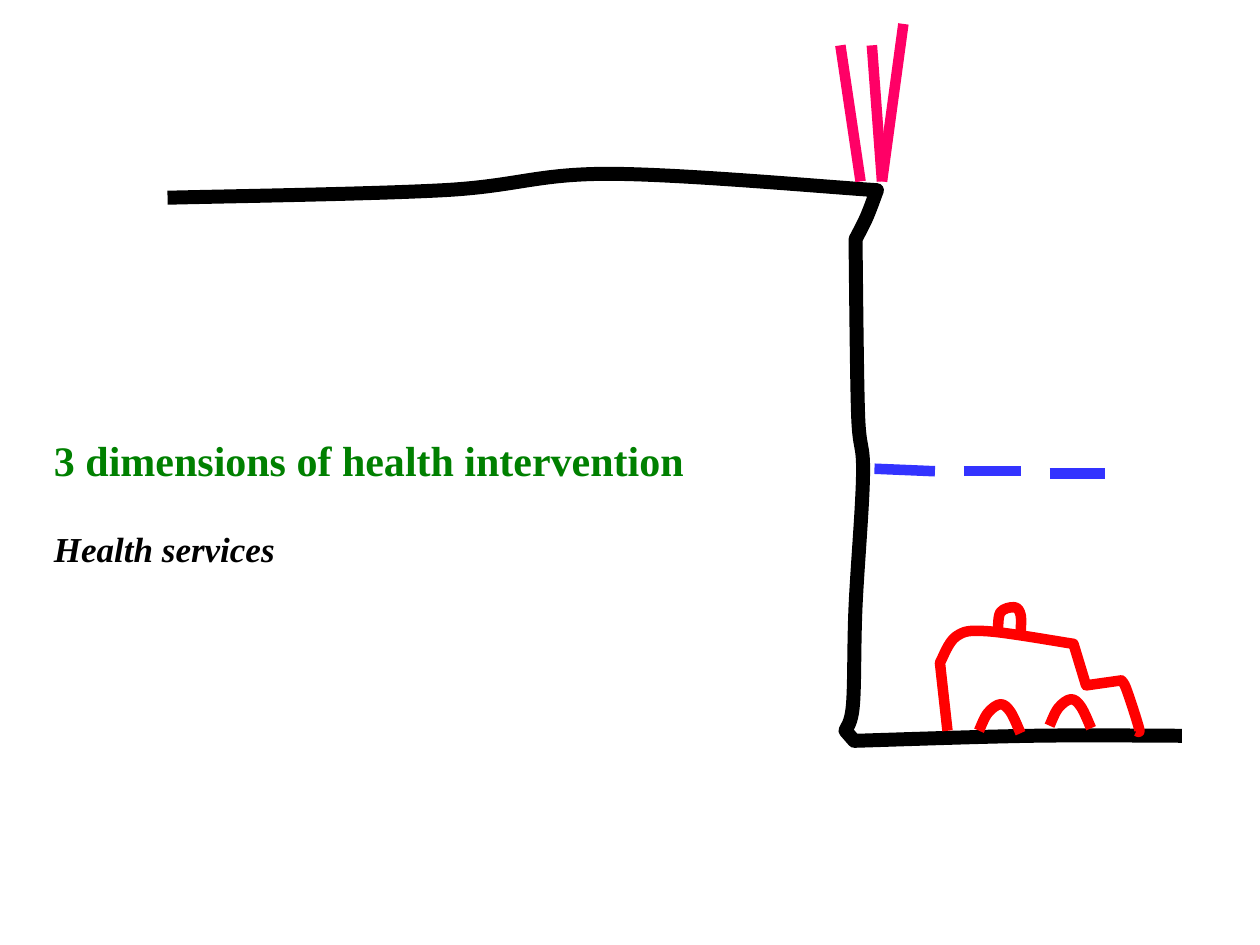
"""Build a slide of a cliff sketch with three dimensions of health intervention."""
from pptx import Presentation
from pptx.dml.color import RGBColor
from pptx.enum.shapes import MSO_CONNECTOR
from pptx.enum.text import MSO_AUTO_SIZE
from pptx.oxml.ns import qn
from pptx.util import Inches, Pt
from lxml import etree

STRAIGHT = MSO_CONNECTOR.STRAIGHT
GROW = MSO_AUTO_SIZE.SHAPE_TO_FIT_TEXT
FONT = "Times New Roman"
COLORS = {"cliff": "000000", "ambulance": "FF0000", "net": "3333FF",
          "fence": "FF0066", "title": "008000", "text": "000000"}

CLIFF = {
    "plateau": [(1.33, 1.57), (3.52, 1.51), (4.83, 1.38), (6.96, 1.51)],
    "edge": [(6.88, 1.72), (6.79, 1.9)],
    "face": [(6.81, 3.28), (6.85, 3.76), (6.79, 4.82), (6.77, 5.59), (6.71, 5.8)],
    "foot": [(6.78, 5.88)],
    "road": [(8.2, 5.84), (9.38, 5.84)],
}
BODY = {
    "rear": [(7.52, 5.8), (7.46, 5.26)],
    "roof": [(7.59, 5.05), (7.84, 5.01), (8.52, 5.11)],
    "windscreen": [(8.62, 5.44)],
    "bonnet": [(8.9, 5.4)],
    "nose": [(8.94, 5.47), (9.04, 5.78), (9.02, 5.8)],
}
SIREN = {"lamp": [(7.92, 5.01), (7.94, 4.86), (8.05, 4.82), (8.1, 4.88), (8.1, 5.03)]}
WHEEL_ARCH = [(0, 0.21), (0.07, 0.07), (0.17, 0), (0.25, 0.06), (0.33, 0.23)]
WHEEL_ORIGINS = [(7.77, 5.59), (8.33, 5.55)]
NET_DASHES = [((6.94, 3.72), (7.42, 3.74)), ((7.65, 3.74), (8.1, 3.74)),
              ((8.33, 3.76), (8.77, 3.76))]
FENCE_FOOT_Y = 1.44
FENCE_POSTS = [(7, (6.92, 0.36)), (7, (7.17, 0.19)), (6.83, (6.67, 0.36))]


def smooth(points):
    """Return Bezier triples for a Catmull-Rom curve through the points."""
    padded = [points[0], *points, points[-1]]
    triples = []
    for before, start, end, after in zip(padded, padded[1:], padded[2:], padded[3:]):
        leave = tuple(s + (e - b) / 6 for b, s, e in zip(before, start, end))
        arrive = tuple(e - (a - s) / 6 for s, e, a in zip(start, end, after))
        triples.append((leave, arrive, end))
    return triples


def trace(parts):
    """Smooth each part, starting it at the corner where the last one ended."""
    triples, corner = [], []
    for points in parts.values():
        triples += smooth(corner + points)
        corner = points[-1:]
    return triples


def set_line(s, color, width):
    s.line.color.rgb = RGBColor.from_string(COLORS[color])
    s.line.width = Pt(width)


def add_outline(shapes, parts, color, width=6):
    """Draw named parts as one open curve."""
    start = next(iter(parts.values()))[0]
    triples = trace(parts)
    controls = [tuple(map(Inches, point)) for triple in triples for point in triple]
    builder = shapes.build_freeform(*map(Inches, start))
    builder.add_line_segments(controls, close=False)
    s = builder.convert_to_shape()
    s.shadow.inherit = False
    s.fill.background()
    set_line(s, color, width)
    path = next(s._element.iter(qn("a:path")))
    segments = path.findall(qn("a:lnTo"))
    for i in range(0, len(segments), 3):
        curve = etree.SubElement(path, qn("a:cubicBezTo"))
        for segment in segments[i:i + 3]:
            curve.append(segment[0])
            path.remove(segment)


def add_stroke(shapes, start, end, color, width=6):
    s = shapes.add_connector(STRAIGHT, *map(Inches, start + end))
    set_line(s, color, width)
    etree.SubElement(s._element.spPr, qn("a:effectLst"))


def add_run(p, text, size, color, italic=None):
    r = p.add_run()
    r.text = text
    r.font.name, r.font.size = FONT, Pt(size)
    r.font.bold, r.font.italic = True, italic
    r.font.color.rgb = RGBColor.from_string(COLORS[color])


def main():
    prs = Presentation()
    prs.slide_width, prs.slide_height = Inches(10), Inches(7.5)
    shapes = prs.slides.add_slide(prs.slide_layouts[6]).shapes

    add_outline(shapes, CLIFF, "cliff", width=8)

    wheels = [{"arch": [(x + dx, y + dy) for dx, dy in WHEEL_ARCH]}
              for x, y in WHEEL_ORIGINS]
    dashes = [{"dash": list(ends)} for ends in NET_DASHES]
    for color, outlines in (("ambulance", [BODY, SIREN, *wheels]), ("net", dashes)):
        group = shapes.add_group_shape()
        for parts in outlines:
            add_outline(group.shapes, parts, color)

    fence = shapes.add_group_shape()
    for foot_x, tip in FENCE_POSTS:
        add_stroke(fence.shapes, (foot_x, FENCE_FOOT_Y), tip, "fence")

    box = shapes.add_textbox(Inches(0.33), Inches(3.4), Inches(6), Inches(1.18))
    tf = box.text_frame
    tf.word_wrap = True
    tf.auto_size = GROW
    add_run(tf.paragraphs[0], "3 dimensions of health intervention", 24, "title")
    p = tf.add_paragraph()
    p.space_before = Pt(24)
    add_run(p, "Health services", 20, "text", italic=True)
    prs.save("out.pptx")


if __name__ == "__main__":
    main()
